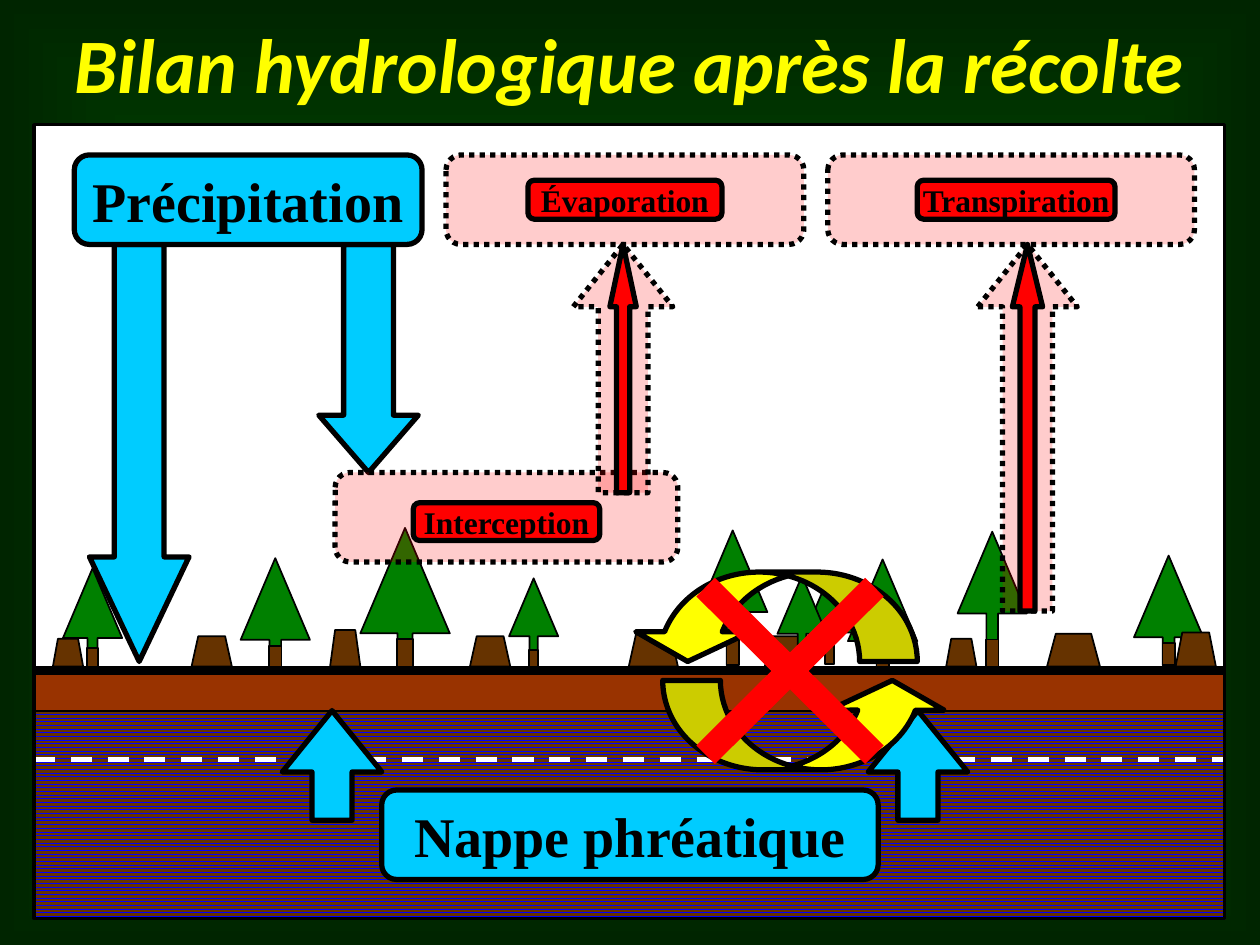
from collections import namedtuple

from lxml import etree
from pptx import Presentation
from pptx import util as u
from pptx.dml.color import RGBColor
from pptx.enum import dml, shapes, text
from pptx.oxml.ns import qn

COLUMNS, ROWS = 100, 75
CELL = u.Inches(0.1)
KIND = shapes.MSO_SHAPE
BLACK, WHITE, RED, BLUE = "000000", "FFFFFF", "FF0000", "00CCFF"
BARK, LEAF, YELLOW, SOIL = "663300", "008000", "FFFF00", "993300"
ROUND_DOT = dml.MSO_LINE.ROUND_DOT


class Box(namedtuple("Box", "left top width height")):
    def inner(self, column, row, width, height):
        return Box(self.left + column, self.top + row, width, height)

    def centred(self, width, height, shift=0):
        return self.inner((self.width - width) / 2 + shift,
                          (self.height - height) / 2, width, height)


def cells(*counts):
    return [round(count * CELL) for count in counts]


def colour(hex_string):
    return RGBColor.from_string(hex_string)


def paint(shape, fill=None, weight=1, alpha=None, dash=None, line=BLACK):
    shape.shadow.inherit = False
    if fill:
        shape.fill.solid()
        shape.fill.fore_color.rgb = colour(fill)
    else:
        shape.fill.background()
    if alpha:
        solid = shape._element.spPr.find(".//" + qn("a:srgbClr"))
        etree.SubElement(solid, qn("a:alpha"), val=str(alpha * 1000))
    if weight:
        shape.line.color.rgb = colour(line)
        shape.line.width = u.Pt(weight)
        if dash:
            shape.line.dash_style = dash
    else:
        shape.line.fill.background()
    return shape


def draw(slide, kind, box, fill=None, weight=1, **style):
    return paint(slide.shapes.add_shape(kind, *cells(*box)), fill, weight, **style)


def rule(slide, start, end, hex_string, weight, dash=None):
    connector = slide.shapes.add_connector(
        shapes.MSO_CONNECTOR.STRAIGHT, *cells(*start, *end))
    connector.line.color.rgb = colour(hex_string)
    connector.line.width = u.Pt(weight)
    if dash:
        connector.line.dash_style = dash
    etree.SubElement(connector._element.spPr, qn("a:effectLst"))


def style_run(run, name, size, hex_string, italic=None):
    run.font.name, run.font.size = name, u.Pt(size)
    run.font.bold, run.font.italic = True, italic
    run.font.color.rgb = colour(hex_string)


def arrow(slide, kind, box, fill, head, shaft=0.5, weight=3, **style):
    shape = draw(slide, kind, box, fill, weight, **style)
    shape.adjustments[0] = shaft
    shape.adjustments[1] = head / box.width


def label(slide, box, wording, fill, size):
    frame = draw(slide, KIND.ROUNDED_RECTANGLE, box, fill, 3).text_frame
    frame.text = wording
    frame.word_wrap = False
    frame.vertical_anchor = text.MSO_ANCHOR.MIDDLE
    paragraph = frame.paragraphs[0]
    paragraph.alignment = text.PP_ALIGN.CENTER
    style_run(paragraph.runs[0], "Times New Roman", size, BLACK)


def former_level(slide, box):
    draw(slide, KIND.ROUNDED_RECTANGLE, box, RED, 3, alpha=20, dash=ROUND_DOT)


def backdrop(slide):
    fill = slide.background.fill
    fill.gradient()
    for stop, hex_string in zip(fill.gradient_stops, ("006600", "002500")):
        stop.color.rgb = colour(hex_string)
    gradient = slide._element.find(".//" + qn("a:gradFill"))
    gradient.remove(gradient.find(qn("a:lin")))
    shading = etree.SubElement(gradient, qn("a:path"), {"path": "shape"})
    etree.SubElement(shading, qn("a:fillToRect"),
                     {side: "50000" for side in "ltrb"})


def heading(slide, box, wording):
    title = slide.shapes.title
    title.left, title.top, title.width, title.height = cells(*box)
    title.text_frame.text = wording
    title.text_frame.vertical_anchor = text.MSO_ANCHOR.MIDDLE
    paragraph = title.text_frame.paragraphs[0]
    paragraph.alignment = text.PP_ALIGN.CENTER
    style_run(paragraph.runs[0], "Calibri", 44, YELLOW, italic=True)


def tree(slide, box):
    arrow(slide, KIND.UP_ARROW, box, LEAF, 1.179 * box.width, 0.169, 1)
    trunk = box.inner(0.41 * box.width, 0.8 * box.height,
                      0.18 * box.width, 0.2 * box.height)
    draw(slide, KIND.RECTANGLE, trunk, BARK)


def stump(slide, box):
    right, bottom = box.left + box.width, box.top + box.height
    inset = box.width / 6
    outline = slide.shapes.build_freeform(*cells(right, bottom))
    outline.add_line_segments([
        cells(right - inset, box.top),
        cells(box.left + inset, box.top),
        cells(box.left, bottom)])
    paint(outline.convert_to_shape(), BARK)


def forest(slide, box):
    back_trees = [(37.7, 4, 3.9, 7.1), (61.2, 3.7, 3.9, 7.1), (87.3, 2.2, 5.5, 8.7)]
    stumps = [(12.5, 3.2, 2.4), (58, 3.2, 2.4), (47.2, 3.9, 2.9), (72.4, 2.4, 2.2),
              (23.5, 2.4, 2.9), (34.6, 3.2, 2.4), (1.5, 2.4, 2.2),
              (80.4, 4.2, 2.6), (90.6, 3.2, 2.7)]
    front_trees = [(2.3, 3.2, 4.7, 7.9), (59, 3.8, 3.9, 7.1), (52.7, 0.2, 5.5, 10.7),
                   (64.6, 2.5, 5.5, 8.7), (25.9, 0, 7.1, 11), (16.4, 2.4, 5.5, 8.7),
                   (73.3, 0.3, 5.5, 10.7)]
    for place in back_trees:
        tree(slide, box.inner(*place))
    for column, width, height in stumps:
        stump(slide, box.inner(column, box.height - height, width, height))
    for place in front_trees:
        tree(slide, box.inner(*place))


def precipitation(slide, box):
    arrow(slide, KIND.DOWN_ARROW, box.inner(1.2, 7.1, 7.9, 33.1), BLUE, 8.3)
    arrow(slide, KIND.DOWN_ARROW, box.inner(19.4, 7.1, 7.9, 18.1), BLUE, 4.55)
    label(slide, box.inner(0, 0, box.width, 7.1), "Précipitation", BLUE, 32)


def interception(slide, box):
    former_level(slide, box)
    label(slide, box.inner(6.2, 2.4, 14.8, 3), "Interception", RED, 18)


def reduced_flux(slide, box, wording, tag_width, tag_shift, stem_column, slim_width):
    panel = box.inner(0, 0, box.width, 7.1)
    stem = box.inner(stem_column, panel.height, 7.9, box.height - panel.height)
    former_level(slide, panel)
    arrow(slide, KIND.UP_ARROW, stem, RED, 4.95, alpha=20, dash=ROUND_DOT)
    label(slide, panel.centred(tag_width, 3.1, tag_shift), wording, RED, 18)
    arrow(slide, KIND.UP_ARROW, stem.centred(slim_width, stem.height), RED, 4.95)


def groundwater(slide, box):
    aquifer = draw(slide, KIND.RECTANGLE, box, BARK)
    aquifer.fill.patterned()
    aquifer.fill.pattern = dml.MSO_PATTERN.ZIG_ZAG
    aquifer.fill.fore_color.rgb = colour("0000FF")
    aquifer.fill.back_color.rgb = colour(BARK)
    label(slide, box.inner(27.6, 6.3, 39.4, 7.1), "Nappe phréatique", BLUE, 32)
    table_row = box.top + 3.9
    rule(slide, (box.left, table_row), (box.left + box.width, table_row),
         WHITE, 3, dml.MSO_LINE.DASH)
    for column in (19.7, 66.2):
        arrow(slide, KIND.UP_ARROW, box.inner(column, 0, 7.9, 8.7), BLUE, 4.87, 0.403)


def broken_cycle(slide, box):
    for column, row, turn in ((2.6, 8.6, 0), (0, 0, 180)):
        loop = draw(slide, KIND.CURVED_UP_ARROW,
                    box.inner(column, row, 22.8, 7.1), YELLOW, 3)
        loop.rotation = turn
        for index, share in enumerate((0.645, 1.289, 0.333)):
            loop.adjustments[index] = share
    left, top, width, height = box.centred(13.4, 13.3)
    rule(slide, (left, top), (left + width, top + height), RED, 15)
    rule(slide, (left + width, top), (left, top + height), RED, 15)


def main():
    deck = Presentation()
    deck.slide_width, deck.slide_height = cells(COLUMNS, ROWS)
    slide = deck.slides.add_slide(deck.slide_layouts[5])
    scene = Box(2.7, 9.9, 94.5, 63)
    soil = scene.inner(0, 43.3, scene.width, 19.7)

    backdrop(slide)
    heading(slide, Box(0, 0, COLUMNS, scene.top), "Bilan hydrologique après la récolte")
    draw(slide, KIND.RECTANGLE, scene, WHITE, 0)
    draw(slide, KIND.RECTANGLE, soil, SOIL, 0)
    forest(slide, scene.inner(0, 32, scene.width, 11))
    rule(slide, soil[:2], (soil.left + soil.width, soil.top), BLACK, 5)
    precipitation(slide, scene.inner(3.2, 2.4, 27.6, 40.2))
    interception(slide, scene.inner(23.9, 27.6, 27.2, 7.1))
    reduced_flux(slide, scene.inner(32.7, 2.4, 28.4, 26.8),
                 "Évaporation", 15.4, 0, 10.1, 2.1)
    reduced_flux(slide, scene.inner(63, 2.4, 29.1, 36.2),
                 "Transpiration", 15.7, 0.4, 11.9, 2.4)
    groundwater(slide, soil.inner(0, 3.2, soil.width, 16.5))
    draw(slide, KIND.RECTANGLE, scene, weight=2)
    broken_cycle(slide, scene.inner(47.3, 35.5, 25.4, 15.7))
    deck.save("out.pptx")


if __name__ == "__main__":
    main()
